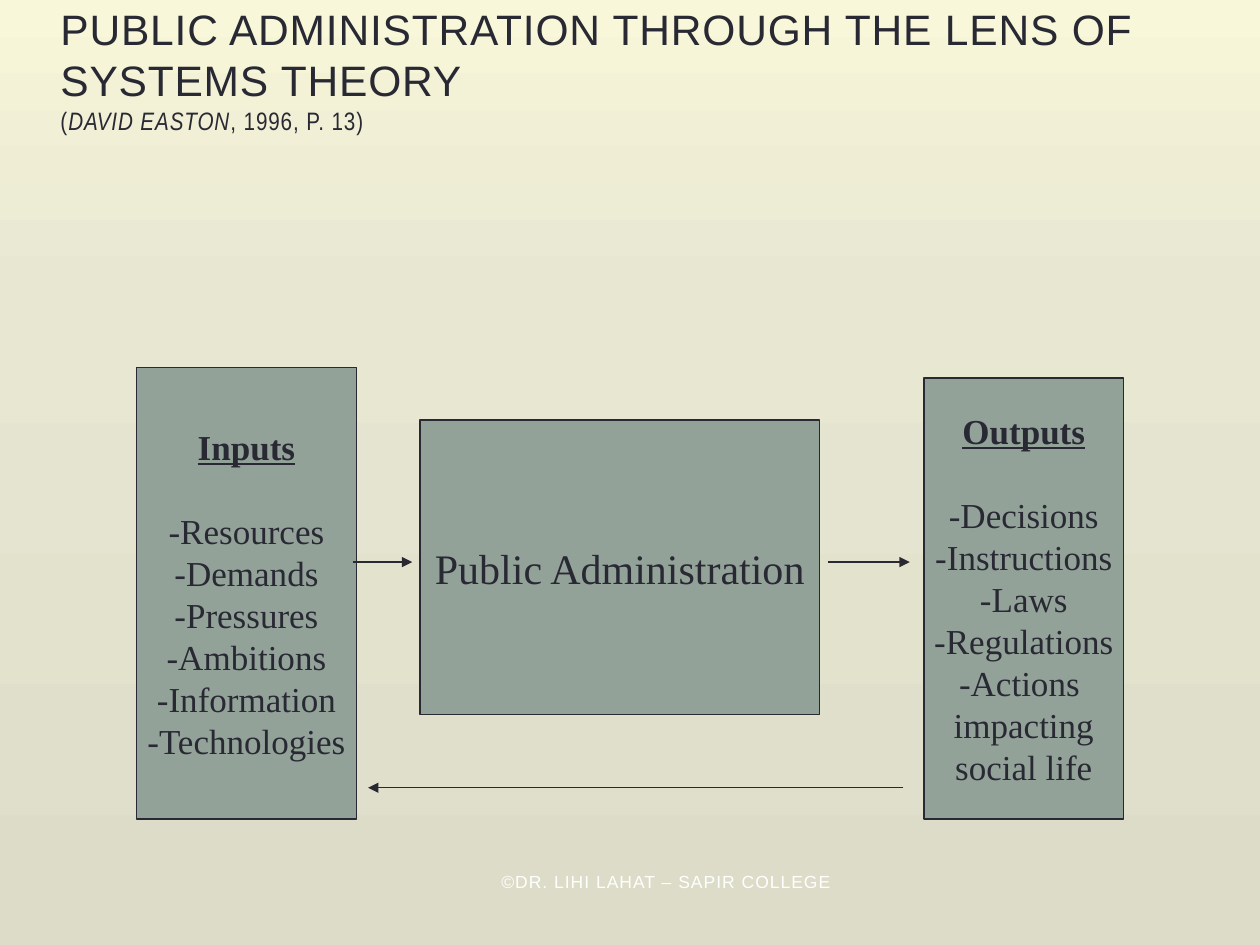
from copy import deepcopy

from pptx import Presentation
from pptx.dml.color import RGBColor
from pptx.enum.shapes import MSO_CONNECTOR, MSO_SHAPE
from pptx.enum.text import MSO_ANCHOR, PP_ALIGN
from pptx.oxml.ns import qn
from pptx.oxml.xmlchemy import OxmlElement
from pptx.util import Cm, Pt

RECTANGLE = MSO_SHAPE.RECTANGLE
STRAIGHT = MSO_CONNECTOR.STRAIGHT
CENTER, LEFT = PP_ALIGN.CENTER, PP_ALIGN.LEFT
TOP, MIDDLE, BOTTOM = MSO_ANCHOR.TOP, MSO_ANCHOR.MIDDLE, MSO_ANCHOR.BOTTOM

# Content; frames are left, top, width, height in centimetres
TITLE = "PUBLIC ADMINISTRATION THROUGH THE LENS OF SYSTEMS THEORY"
CITATION = [("(", False), ("DAVID EASTON", True), (", 1996, P. 13)", False)]
TITLE_FRAME = (0.97, 0.74, 23.7, 2.11)
FOOTER = "©DR. LIHI LAHAT – SAPIR COLLEGE"
FOOTER_FRAME = (9.4, 17.43, 8.05, 1.27)
PROCESS = ("Public Administration", (8.47, 8.47, 8.05, 5.93))
LISTS = [
    ("Outputs", ["-Decisions", "-Instructions", "-Laws", "-Regulations",
                 "-Actions ", "impacting", "social life"],
     (18.63, 7.62, 4.02, 8.89)),
    ("Inputs", ["-Resources", "-Demands", "-Pressures", "-Ambitions",
                "-Information", "-Technologies"],
     (2.75, 7.41, 4.44, 9.1)),
]
FLOW_Y, FEEDBACK_Y = 11.33, 15.88
ARROWS = [  # start x, end x, y
    (16.69, 18.34, FLOW_Y),
    (7.11, 8.31, FLOW_Y),
    (18.21, 7.42, FEEDBACK_Y),
]

THEME = {
    "ink": RGBColor.from_string("292934"),
    "box": RGBColor.from_string("93A299"),
    "footer": RGBColor.from_string("FFFFFF"),
    "background": [(0, "F8F7D9"), (0.31, "E8E7D2"), (1, "DDDCC8")],
    "sans": "Arial", "narrow": "Arial Narrow", "serif": "Times New Roman",
    "title_size": 24.3, "citation_size": 14.4, "process_size": 24,
    "list_size": 20, "footer_size": 10,
    "line_width": Pt(0.75), "leading": 1.2,
}


def paint_background(slide):
    fill = slide.background.fill
    fill.gradient()
    fill.gradient_angle = 270
    stop_list = slide.element.find(".//" + qn("a:gsLst"))
    stop_list.append(deepcopy(stop_list[-1]))
    for stop, (position, color) in zip(fill.gradient_stops, THEME["background"]):
        stop.position = position
        stop.color.rgb = RGBColor.from_string(color)


def format_runs(paragraph, font_name, size, color=THEME["ink"], spacing=0):
    for run in paragraph.runs:
        run.font.name = font_name
        run.font.size = Pt(size)
        run.font.color.rgb = color
        if spacing:
            run.font._element.set("spc", str(spacing))


def add_text_box(slide, frame, text, anchor):
    text_frame = slide.shapes.add_textbox(*map(Cm, frame)).text_frame
    text_frame.word_wrap = True
    text_frame.vertical_anchor = anchor
    text_frame.text = text
    return text_frame


def add_box(slide, frame, lines, size):
    shape = slide.shapes.add_shape(RECTANGLE, *map(Cm, frame))
    shape.shadow.inherit = False
    shape.fill.solid()
    shape.fill.fore_color.rgb = THEME["box"]
    shape.line.color.rgb = THEME["ink"]
    shape.line.width = THEME["line_width"]
    text_frame = shape.text_frame
    text_frame.word_wrap = False
    text_frame.vertical_anchor = MIDDLE
    text_frame.text = "\n".join(lines)
    for paragraph in text_frame.paragraphs:
        paragraph.alignment = CENTER
        paragraph.line_spacing = Pt(size * THEME["leading"])
        format_runs(paragraph, THEME["serif"], size)
    return text_frame


def add_arrow(slide, start_x, end_x, y):
    arrow = slide.shapes.add_connector(STRAIGHT, Cm(start_x), Cm(y), Cm(end_x), Cm(y))
    arrow.line.color.rgb = THEME["ink"]
    arrow.line.width = THEME["line_width"]
    head = OxmlElement("a:tailEnd")
    head.set("type", "triangle")
    arrow.line._get_or_add_ln().append(head)
    arrow._element.spPr.append(OxmlElement("a:effectLst"))


presentation = Presentation()
presentation.slide_width, presentation.slide_height = Cm(25.4), Cm(19.05)
slide = presentation.slides.add_slide(presentation.slide_layouts[6])
paint_background(slide)

# Footer
footer = add_text_box(slide, FOOTER_FRAME, FOOTER, TOP).paragraphs[0]
footer.alignment = CENTER
format_runs(footer, THEME["sans"], THEME["footer_size"], THEME["footer"], 60)

# Title and citation
title_frame = add_text_box(slide, TITLE_FRAME, TITLE, BOTTOM)
title = title_frame.paragraphs[0]
title.alignment = LEFT
title.line_spacing = Pt(THEME["title_size"] * THEME["leading"])
format_runs(title, THEME["sans"], THEME["title_size"], spacing=50)
citation = title_frame.add_paragraph()
for text, italic in CITATION:
    run = citation.add_run()
    run.text = text
    run.font.italic = italic
format_runs(citation, THEME["narrow"], THEME["citation_size"], spacing=50)

# Process box, then the lists with their headings
process_text, process_frame = PROCESS
add_box(slide, process_frame, [process_text], THEME["process_size"])
for heading, items, frame in LISTS:
    box_text = add_box(slide, frame, [heading, *items], THEME["list_size"])
    heading_paragraph = box_text.paragraphs[0]
    heading_paragraph.space_after = Pt(THEME["list_size"] * THEME["leading"])
    heading_font = heading_paragraph.runs[0].font
    heading_font.bold = heading_font.underline = True

# Flow and feedback arrows
for arrow in ARROWS:
    add_arrow(slide, *arrow)

presentation.save("out.pptx")
